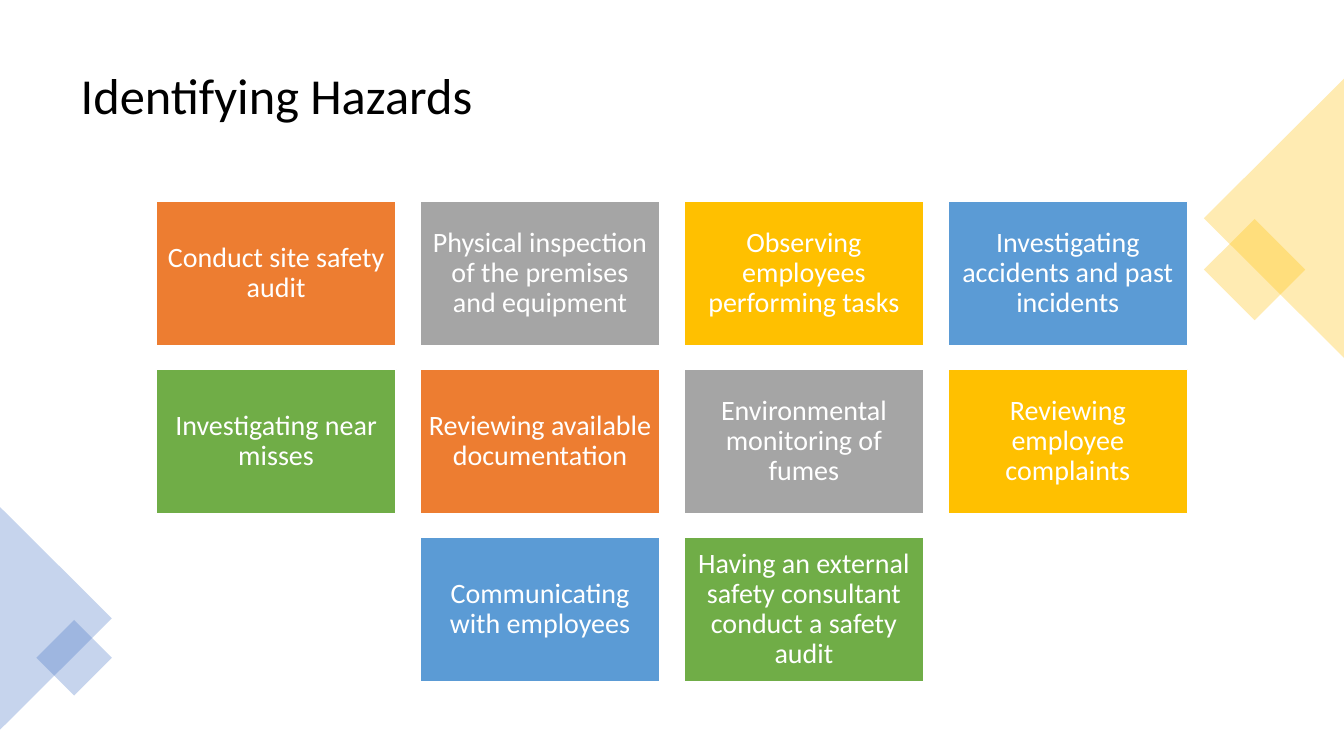
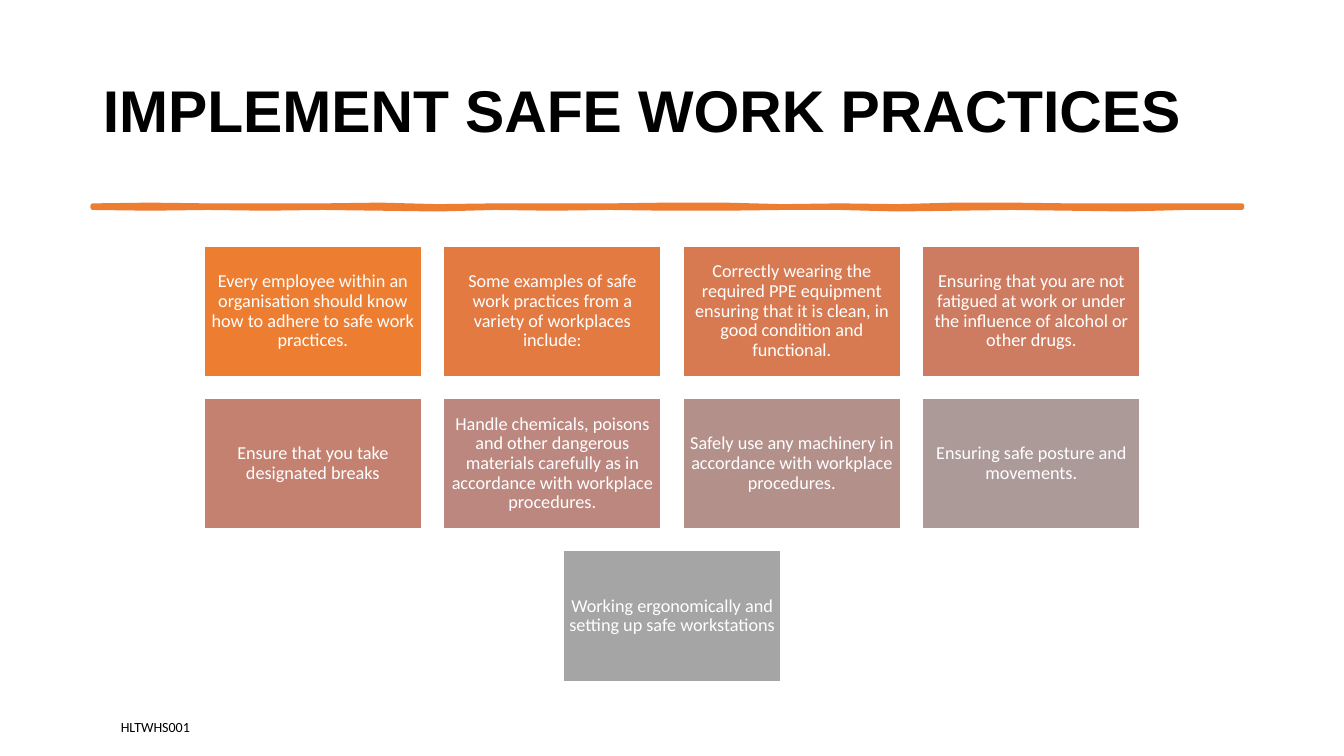
from lxml.etree import SubElement
from pptx import Presentation
from pptx.dml.color import RGBColor
from pptx.enum.shapes import MSO_SHAPE as Shape
from pptx.enum.text import MSO_ANCHOR as Anchor, MSO_AUTO_SIZE as AutoSize, PP_ALIGN as Align
from pptx.oxml.ns import qn
from pptx.util import Inches, Pt

ORANGE, GREY, GOLD = "ED7D31", "A5A5A5", "FFC000"
BLUE, GREEN, INDIGO = "5B9BD5", "70AD47", "4472C4"
WHITE, BLACK = "FFFFFF", "000000"

HAZARD_CHECKS = [
    "Conduct site safety audit",
    "Physical inspection of the premises and equipment",
    "Observing employees performing tasks",
    "Investigating accidents and past incidents",
    "Investigating near misses",
    "Reviewing available documentation",
    "Environmental monitoring of fumes",
    "Reviewing employee complaints",
    "Communicating with employees",
    "Having an external safety consultant conduct a safety audit",
]
HAZARD_COLOURS = [ORANGE, GREY, GOLD, BLUE, GREEN]

SAFE_PRACTICES = [
    "Every employee within an organisation should know how to adhere to safe work practices.",
    "Some examples of safe work practices from a variety of workplaces include:",
    "Correctly wearing the required PPE equipment ensuring that it is clean, "
    "in good condition and functional.",
    "Ensuring that you are not fatigued at work or under the influence of alcohol or other drugs.",
    "Ensure that you take designated breaks",
    "Handle chemicals, poisons and other dangerous materials carefully as in accordance "
    "with workplace procedures.",
    "Safely use any machinery in accordance with workplace procedures.",
    "Ensuring safe posture and movements.",
    "Working ergonomically and setting up safe workstations",
]
PRACTICE_COLOURS = [ORANGE, "E27A42", "D87A51", "CE7C61", "C48170",
                    "BC877E", "B4908B", "AC9A99", GREY]

# Wobble of the brush stroke's edges, in tenths of a row, at even steps
STROKE_TOP = [0, -1, 0, 0, 0, -1, 1, 0, 0, 0, -1, -1, 1, 0, 1, -1, -1, 0, 0, 0, 0]
STROKE_BOTTOM = [0, 1, 0, 1, 0, 1, 2, 0, 1, 0, 1, 1, 0, 0, 2, 1, 0, 1, 2, 0, 0]


def rgb(hex_code):
    return RGBColor.from_string(hex_code)


def apply(target, formats):
    for name, value in formats.items():
        setattr(target, name, value)


class Deck:
    """Slides on a grid of 100 columns by 100 rows."""
    TILES_PER_ROW = 4
    TILE_RATIO = 0.6   # height to width
    TILE_GAP = 0.1     # gap to width

    def __init__(self):
        self.prs = Presentation()
        apply(self.prs, {"slide_width": Inches(13.33), "slide_height": Inches(7.5)})
        self.slide = None

    def cols(self, count):
        return round(self.prs.slide_width * count / 100)

    def rows(self, count):
        return round(self.prs.slide_height * count / 100)

    def box(self, x, y, w, h):
        return self.cols(x), self.rows(y), self.cols(w), self.rows(h)

    def set_text(self, frame, text, size, colour, font="Calibri", bold=False,
                 align=Align.LEFT, spacing=0.9):
        frame.text = text
        paragraph = frame.paragraphs[0]
        apply(paragraph, {"alignment": align, "line_spacing": spacing})
        apply(paragraph.font, {"name": font, "size": Pt(size), "bold": bold})
        paragraph.font.color.rgb = rgb(colour)

    def paint(self, shape, fill, line=None, width=1, opacity=None):
        shape.shadow.inherit = False
        shape.fill.solid()
        shape.fill.fore_color.rgb = rgb(fill)
        if opacity is not None:
            colour = shape.element.spPr.find(qn("a:solidFill"))[0]
            SubElement(colour, qn("a:alpha"), val=str(opacity * 1000))
        if line:
            shape.line.color.rgb = rgb(line)
            shape.line.width = Pt(width)
        else:
            shape.line.fill.background()

    def titled_slide(self, text, place, size, **style):
        self.slide = self.prs.slides.add_slide(self.prs.slide_layouts[5])
        title = self.slide.shapes.title
        apply(title, dict(zip(("left", "top", "width", "height"), self.box(*place))))
        self.set_text(title.text_frame, text, size, BLACK, **style)
        apply(title.text_frame, {"vertical_anchor": Anchor.MIDDLE,
                                 "auto_size": AutoSize.NONE, "word_wrap": True})

    def ornament(self, kind, place, rotation, colour):
        shape = self.slide.shapes.add_shape(kind, *self.box(*place))
        shape.rotation = rotation
        self.paint(shape, colour, opacity=30)

    def tile(self, left, top, width, height, text, size, colour):
        tile = self.slide.shapes.add_shape(Shape.RECTANGLE, left, top, width, height)
        self.paint(tile, colour, line=WHITE)
        frame = tile.text_frame
        inset = Pt(size * 0.28)
        apply(frame, {"word_wrap": True, "vertical_anchor": Anchor.MIDDLE,
                      "margin_left": inset, "margin_right": inset,
                      "margin_top": inset, "margin_bottom": inset})
        self.set_text(frame, text, size, WHITE, align=Align.CENTER)

    def tiles(self, texts, colours, top, width, size):
        """Rows of tiles, each row centred on the slide."""
        tile_w = self.cols(width)
        tile_h, gap = round(tile_w * self.TILE_RATIO), round(tile_w * self.TILE_GAP)
        for index, text in enumerate(texts):
            row, col = divmod(index, self.TILES_PER_ROW)
            in_row = min(self.TILES_PER_ROW, len(texts) - row * self.TILES_PER_ROW)
            row_w = in_row * (tile_w + gap) - gap
            self.tile((self.prs.slide_width - row_w) // 2 + col * (tile_w + gap),
                      self.rows(top) + row * (tile_h + gap), tile_w, tile_h,
                      text, size, colours[index % len(colours)])

    def brush_stroke(self, x, y, width, thickness, colour):
        step = width / (len(STROKE_TOP) - 1)

        def edge(offsets, base):
            return [(self.cols(x + i * step), self.rows(base + offset / 10))
                    for i, offset in enumerate(offsets)]

        start, *rest = edge(STROKE_TOP, y) + edge(STROKE_BOTTOM, y + thickness)[::-1]
        outline = self.slide.shapes.build_freeform(*start)
        outline.add_line_segments(rest, close=True)
        stroke = outline.convert_to_shape()
        self.paint(stroke, colour, line=colour, width=3.25)
        SubElement(stroke.element.spPr.find(qn("a:ln")), qn("a:round"))

    def label(self, text, place, size):
        frame = self.slide.shapes.add_textbox(*self.box(*place)).text_frame
        frame.word_wrap = False
        self.set_text(frame, text, size, BLACK, spacing=1.0)


def main():
    deck = Deck()

    deck.titled_slide("Identifying Hazards", (5.25, 4.67, 89.5, 16.53), 36)
    for ornament in [
        (Shape.RECTANGLE, (90.68, 30.93, 5.33, 9.47), 45, GOLD),
        (Shape.ISOSCELES_TRIANGLE, (84.4, 19.6, 20.78, 18.53), 270, GOLD),
        (Shape.ISOSCELES_TRIANGLE, (-4.13, 74.4, 16.58, 14.8), 90, INDIGO),
        (Shape.RECTANGLE, (3.53, 83.47, 3.98, 7.07), 45, INDIGO),
    ]:
        deck.ornament(*ornament)
    deck.tiles(HAZARD_CHECKS, HAZARD_COLOURS, top=26.67, width=17.85, size=20)

    deck.titled_slide("IMPLEMENT SAFE WORK PRACTICES", (6.9, 5.33, 86.27, 19.33), 42,
                      font="Arial", bold=True)
    deck.brush_stroke(6.9, 27.2, 85.5, 0.27, ORANGE)
    deck.tiles(SAFE_PRACTICES, PRACTICE_COLOURS, top=32.53, width=16.2, size=13)
    deck.label("HLTWHS001", (8.25, 94.4, 6.83, 3.6), 10)

    deck.prs.save("out.pptx")


if __name__ == "__main__":
    main()
